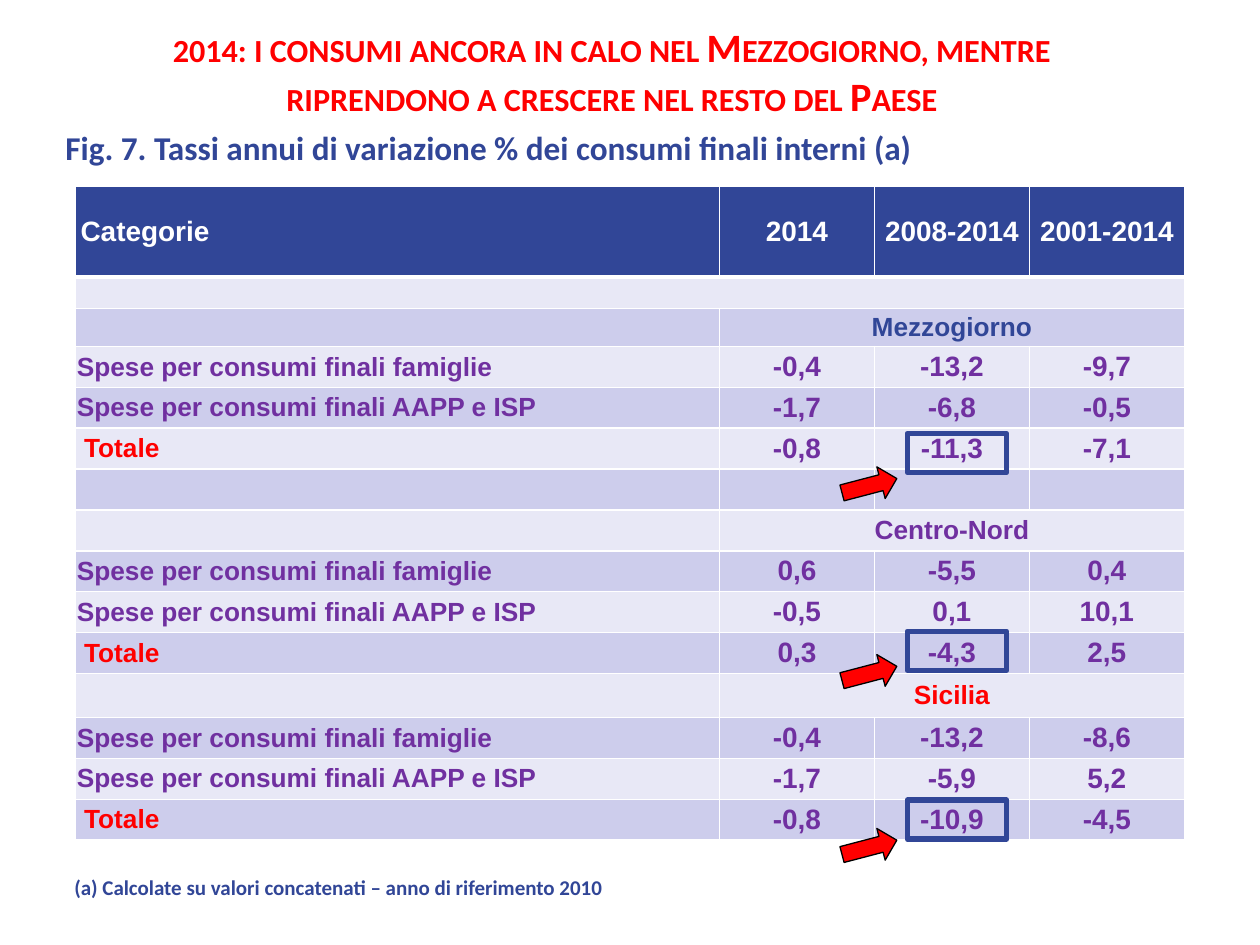
"""Build the slide on yearly changes in final domestic consumption."""
from lxml import etree
from pptx import Presentation
from pptx.dml.color import RGBColor
from pptx.enum import shapes, text
from pptx.oxml import ns
from pptx.util import Inches, Pt

BLUE = RGBColor(0x31, 0x46, 0x97)
RED = RGBColor(0xFF, 0x00, 0x00)
PURPLE = RGBColor(0x70, 0x30, 0xA0)
WHITE = RGBColor(0xFF, 0xFF, 0xFF)
BLACK = RGBColor(0x00, 0x00, 0x00)
BANDS = (RGBColor(0xCD, 0xCD, 0xEC), RGBColor(0xE8, 0xE8, 0xF6))
LEFT, CENTER = text.PP_ALIGN.LEFT, text.PP_ALIGN.CENTER

TITLE = ("2014: i consumi ancora in calo nel Mezzogiorno, "
         "mentre riprendono a crescere nel resto del Paese")
CAPTION = "Fig. 7. Tassi annui di variazione % dei consumi finali interni (a)"
FOOTNOTE = "(a) Calcolate su valori concatenati – anno di riferimento 2010"
HEADER = ("Categorie", "2014", "2008-2014", "2001-2014")
CATEGORIES = ("Spese per consumi finali famiglie",
              "Spese per consumi finali AAPP e ISP", " Totale")
AREAS = [
    ("Mezzogiorno", BLUE, [("-0,4", "-13,2", "-9,7"), ("-1,7", "-6,8", "-0,5"),
                           ("-0,8", "-11,3", "-7,1")]),
    ("Centro-Nord", PURPLE, [("0,6", "-5,5", "0,4"), ("-0,5", "0,1", "10,1"),
                             ("0,3", "-4,3", "2,5")]),
    ("Sicilia", RED, [("-0,4", "-13,2", "-8,6"), ("-1,7", "-5,9", "5,2"),
                      ("-0,8", "-10,9", "-4,5")]),
]
EMPTY_ROW = ("", "", "", "")
TABLE_HEIGHT = 5.19
COLUMN_WIDTHS = (5.11, 1.23, 1.23, 1.23)
SPECIAL_HEIGHTS = {0: 0.72, 1: 0.25, 2: 0.3, 11: 0.35}
HIGHLIGHTS = [(3.44, 3.63), (5.01, 5.12), (6.35, 6.5)]


def write(frame, content, size, color, font="Arial", align=LEFT, spacing=None, small_caps=False):
    paragraph = frame.paragraphs[0]
    paragraph.alignment = align
    if spacing:
        paragraph.line_spacing = spacing
    if not content:
        paragraph._p.get_or_add_endParaRPr().set("sz", str(size * 100))
        return
    run = paragraph.add_run()
    run.text = content
    run.font.size = Pt(size)
    run.font.name = font
    run.font.bold = True
    run.font.color.rgb = color
    if small_caps:
        run._r.get_or_add_rPr().set("cap", "small")


def add_text(slide, box, content, size, color, **options):
    frame = slide.shapes.add_textbox(*map(Inches, box)).text_frame
    frame.word_wrap = True
    frame.auto_size = text.MSO_AUTO_SIZE.SHAPE_TO_FIT_TEXT
    frame.margin_left = frame.margin_right = Inches(0.09)
    frame.margin_top = frame.margin_bottom = Inches(0.04)
    write(frame, content, size, color, font="Calibri", **options)


def add_border(cell, side, width):
    properties = cell._tc.get_or_add_tcPr()
    line = etree.SubElement(properties, ns.qn(f"a:ln{side}"), w=str(Pt(width)))
    fill = etree.SubElement(line, ns.qn("a:solidFill"))
    etree.SubElement(fill, ns.qn("a:srgbClr"), val=str(WHITE))


def table_rows():
    rows = [HEADER, EMPTY_ROW]
    title_colors = {}
    for name, color, values in AREAS:
        title_colors[len(rows)] = color
        rows.append(("", name, "", ""))
        rows += [(category, *numbers) for category, numbers in zip(CATEGORIES, values)]
        if name == "Mezzogiorno":
            rows.append(EMPTY_ROW)
    return rows, title_colors


def cell_format(row, column, content, title_colors):
    if row == 0:
        return 16, WHITE
    if row in title_colors:
        return 15, title_colors[row]
    if column or not content:
        return (16 if content else 12), PURPLE
    return 15, RED if content == CATEGORIES[-1] else PURPLE


def add_consumption_table(slide):
    rows, title_colors = table_rows()
    regular = (TABLE_HEIGHT - sum(SPECIAL_HEIGHTS.values())) / (len(rows) - len(SPECIAL_HEIGHTS))
    table = slide.shapes.add_table(len(rows), len(HEADER), Inches(0.6), Inches(1.48),
                                   Inches(sum(COLUMN_WIDTHS)), Inches(TABLE_HEIGHT)).table
    for column, width in zip(table.columns, COLUMN_WIDTHS):
        column.width = Inches(width)
    for r, row in enumerate(rows):
        table.rows[r].height = Inches(SPECIAL_HEIGHTS.get(r, regular))
        for c, content in enumerate(row):
            cell = table.cell(r, c)
            cell.vertical_anchor = text.MSO_ANCHOR.MIDDLE
            cell.margin_left = cell.margin_right = Inches(0.01 if r and not c else 0.04)
            cell.margin_top = cell.margin_bottom = 0
            for side in "LRTB":
                thick = (r, side) in ((0, "B"), (1, "T"))
                add_border(cell, side, 3 if thick else 1)
            cell.fill.solid()
            cell.fill.fore_color.rgb = BANDS[r % 2] if r else BLUE
            size, color = cell_format(r, c, content, title_colors)
            write(cell.text_frame, content, size, color, align=CENTER if c else LEFT)
    table.cell(1, 0).merge(table.cell(1, 3))
    for r in title_colors:
        table.cell(r, 1).merge(table.cell(r, 3))


def add_mark(slide, kind, box, line_color, line_width, fill=None, rotation=0):
    shape = slide.shapes.add_shape(kind, *map(Inches, box))
    shape.shadow.inherit = False
    shape.rotation = rotation
    shape.line.color.rgb = line_color
    shape.line.width = Pt(line_width)
    if fill is None:
        shape.fill.background()
    else:
        shape.fill.solid()
        shape.fill.fore_color.rgb = fill


def main():
    presentation = Presentation()
    presentation.slide_width, presentation.slide_height = Inches(10), Inches(7.5)
    slide = presentation.slides.add_slide(presentation.slide_layouts[6])
    add_text(slide, (0.43, 0.99, 9.03, 0.4), CAPTION, 19, BLUE, spacing=0.97)
    add_consumption_table(slide)
    add_text(slide, (0.7, 0.14, 8.31, 0.89), TITLE, 23, RED, align=CENTER, small_caps=True)
    add_text(slide, (0.5, 6.91, 9.03, 0.28), FOOTNOTE, 12, BLUE, spacing=0.97)
    for frame_top, _ in HIGHLIGHTS:
        add_mark(slide, shapes.MSO_SHAPE.RECTANGLE, (7.2, frame_top, 0.79, 0.31), BLUE, 3)
    for _, arrow_top in HIGHLIGHTS:
        add_mark(slide, shapes.MSO_SHAPE.DOWN_ARROW, (6.77, arrow_top, 0.26, 0.45), BLACK, 0.75,
                 fill=RED, rotation=255.3)
    presentation.save("out.pptx")


if __name__ == "__main__":
    main()
